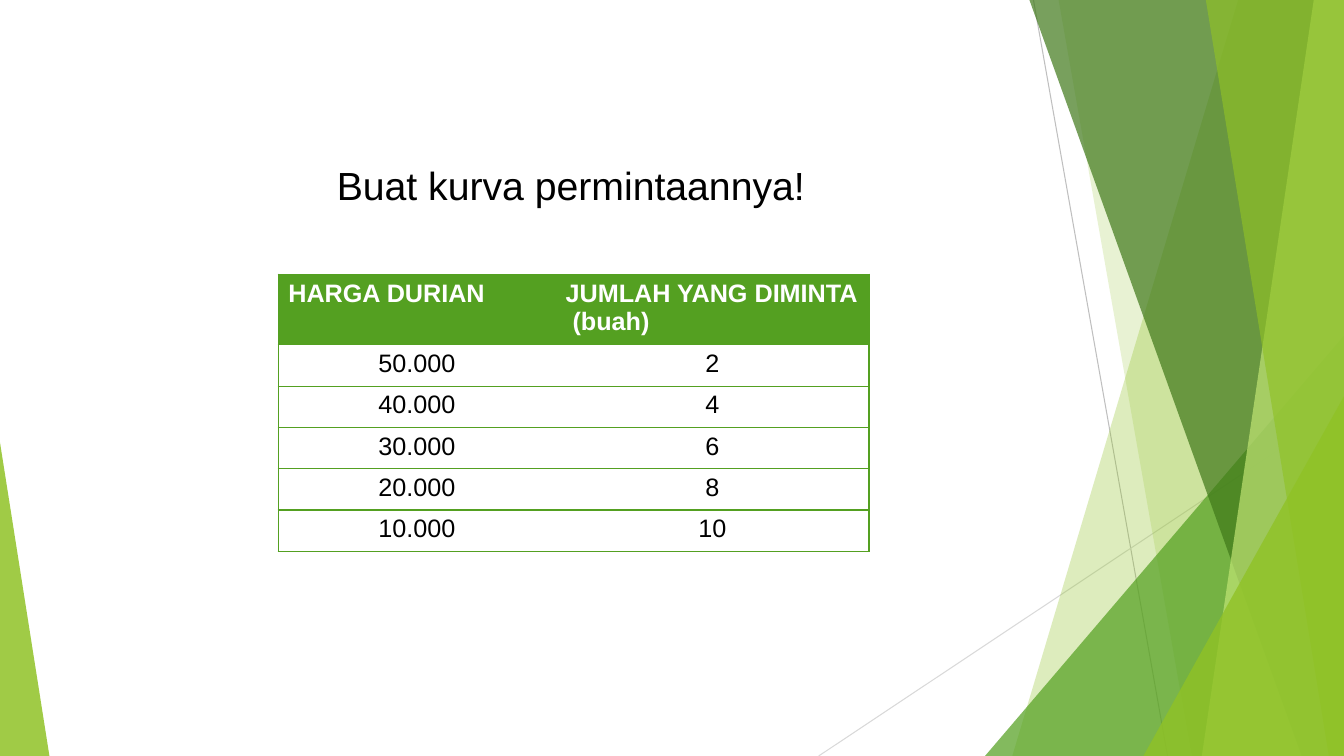
from dataclasses import dataclass

from lxml.etree import SubElement
from pptx import Presentation
from pptx.dml.color import RGBColor
from pptx.enum.shapes import MSO_CONNECTOR, MSO_SHAPE
from pptx.enum.text import MSO_ANCHOR, MSO_AUTO_SIZE, PP_ALIGN
from pptx.oxml.ns import qn
from pptx.shapes.autoshape import Shape
from pptx.slide import Slide
from pptx.table import _Cell as Cell
from pptx.util import Inches, Pt

WIDTH, HEIGHT = 13.33, 7.5
FONT = "Arial"
BLACK = RGBColor(0x00, 0x00, 0x00)
WHITE = RGBColor(0xFF, 0xFF, 0xFF)
LIME = RGBColor(0x90, 0xC2, 0x26)
PALE_LIME = RGBColor(0xC0, 0xE4, 0x74)
GREEN = RGBColor(0x54, 0xA0, 0x21)
DARK_GREEN = RGBColor(0x3F, 0x78, 0x19)
GRAY = RGBColor(0xBF, 0xBF, 0xBF)
LIGHT_GRAY = RGBColor(0xD9, 0xD9, 0xD9)


@dataclass
class Ray:
    start: tuple[float, float]
    end: tuple[float, float]
    color: RGBColor


@dataclass
class Ribbon:
    """A band reaching the right edge, given by its left side's two ends."""
    top_x: float
    bottom_x: float
    color: RGBColor
    opacity: int


@dataclass
class Wedge:
    """A right triangle standing on the bottom edge."""
    left: float
    top: float
    width: float
    apex: float
    color: RGBColor
    opacity: int


RAYS = [
    Ray((10.25, 0), (11.58, HEIGHT), GRAY),
    Ray((WIDTH, 4.03), (8.12, HEIGHT), LIGHT_GRAY),
]
FACETS = [
    Ribbon(12.28, 10.04, LIME, 30),
    Ribbon(10.5, 11.82, LIME, 20),
    Wedge(9.77, 3.33, 3.56, 1, GREEN, 72),
    Ribbon(10.21, 12.91, DARK_GREEN, 70),
    Ribbon(13.03, 11.92, PALE_LIME, 70),
    Ribbon(11.96, 13.18, LIME, 65),
    Wedge(11.34, 3.93, 1.99, 1, LIME, 80),
    Wedge(0, 4.39, 0.49, 0, LIME, 85),
]
HEADINGS = ("HARGA DURIAN", "JUMLAH YANG DIMINTA\v (buah)")
DEMAND = [("50.000", "2"), ("40.000", "4"), ("30.000", "6"),
          ("20.000", "8"), ("10.000", "10")]
COLUMN_WIDTHS = (2.75, 3.11)
HEADING_HEIGHT, ROW_HEIGHT = 0.65, 0.41

TITLE_FONT = {"name": FONT, "size": Pt(28), "bold": False}
HEADING_FONT = {"name": FONT, "size": Pt(18), "bold": True}
BODY_FONT = {"name": FONT, "size": Pt(18), "bold": False}


def apply_format(target: object, values: dict) -> None:
    for key, value in values.items():
        setattr(target, key, value)


def draw_ray(slide: Slide, ray: Ray) -> None:
    points = [Inches(v) for v in (*ray.start, *ray.end)]
    line = slide.shapes.add_connector(MSO_CONNECTOR.STRAIGHT, *points)
    line.line.color.rgb = ray.color
    line.line.width = Pt(0.75)
    SubElement(line._element.spPr, qn("a:effectLst"))


def add_ribbon(slide: Slide, ribbon: Ribbon) -> Shape:
    builder = slide.shapes.build_freeform(Inches(ribbon.top_x), 0)
    corners = [(WIDTH, 0), (WIDTH, HEIGHT), (ribbon.bottom_x, HEIGHT)]
    builder.add_line_segments([(Inches(x), Inches(y)) for x, y in corners])
    return builder.convert_to_shape()


def add_wedge(slide: Slide, wedge: Wedge) -> Shape:
    box = (wedge.left, wedge.top, wedge.width, HEIGHT - wedge.top)
    triangle = slide.shapes.add_shape(
        MSO_SHAPE.ISOSCELES_TRIANGLE, *(Inches(v) for v in box))
    triangle.adjustments[0] = wedge.apex
    return triangle


def draw_facet(slide: Slide, facet: Ribbon | Wedge) -> None:
    add = add_ribbon if isinstance(facet, Ribbon) else add_wedge
    shape = add(slide, facet)
    shape.shadow.inherit = False
    shape.line.fill.background()
    shape.fill.solid()
    shape.fill.fore_color.rgb = facet.color
    color = shape._element.spPr.find(qn("a:solidFill"))[0]
    SubElement(color, qn("a:alpha"), val=str(facet.opacity * 1000))


def set_borders(cell: Cell, hidden: str) -> None:
    """Draw green borders, except on the hidden side."""
    properties = cell._tc.get_or_add_tcPr()
    for side in ("lnL", "lnR", "lnT", "lnB"):
        border = SubElement(properties, qn(f"a:{side}"), w=str(Pt(1)))
        if side == hidden:
            SubElement(border, qn("a:noFill"))
        else:
            fill = SubElement(border, qn("a:solidFill"))
            SubElement(fill, qn("a:srgbClr"), val=str(GREEN))


def fill_cell(cell: Cell, text: str, is_heading: bool) -> None:
    cell.text = text
    if is_heading:
        cell.fill.solid()
        cell.fill.fore_color.rgb = GREEN
    else:
        cell.fill.background()
    paragraph = cell.text_frame.paragraphs[0]
    paragraph.alignment = PP_ALIGN.LEFT if is_heading else PP_ALIGN.CENTER
    for run in paragraph.runs:
        apply_format(run.font, HEADING_FONT if is_heading else BODY_FONT)
        run.font.color.rgb = WHITE if is_heading else BLACK


def draw_demand_table(slide: Slide) -> None:
    rows = [HEADINGS, *DEMAND]
    heights = [HEADING_HEIGHT] + [ROW_HEIGHT] * len(DEMAND)
    table = slide.shapes.add_table(
        len(rows), len(HEADINGS), Inches(2.76), Inches(2.72),
        Inches(sum(COLUMN_WIDTHS)), Inches(sum(heights))).table
    for column, width in zip(table.columns, COLUMN_WIDTHS):
        column.width = Inches(width)
    for r, (texts, height) in enumerate(zip(rows, heights)):
        table.rows[r].height = Inches(height)
        for c, text in enumerate(texts):
            cell = table.cell(r, c)
            set_borders(cell, hidden="lnL" if c else "lnR")
            fill_cell(cell, text, is_heading=r == 0)


def write_title(slide: Slide) -> None:
    title = slide.shapes.title
    apply_format(title, {"left": Inches(3.24), "top": Inches(1.55),
                         "width": Inches(4.9), "height": Inches(0.57)})
    frame = title.text_frame
    frame.text = "Buat kurva permintaannya!"
    apply_format(frame, {"word_wrap": False, "vertical_anchor": MSO_ANCHOR.TOP,
                         "auto_size": MSO_AUTO_SIZE.SHAPE_TO_FIT_TEXT})
    paragraph = frame.paragraphs[0]
    paragraph.alignment = PP_ALIGN.LEFT
    apply_format(paragraph.runs[0].font, TITLE_FONT)
    paragraph.runs[0].font.color.rgb = BLACK


def main() -> None:
    deck = Presentation()
    deck.slide_width, deck.slide_height = Inches(WIDTH), Inches(HEIGHT)
    slide = deck.slides.add_slide(deck.slide_layouts.get_by_name("Title Only"))
    for ray in RAYS:
        draw_ray(slide, ray)
    for facet in FACETS:
        draw_facet(slide, facet)
    draw_demand_table(slide)
    write_title(slide)
    deck.save("out.pptx")


if __name__ == "__main__":
    main()
